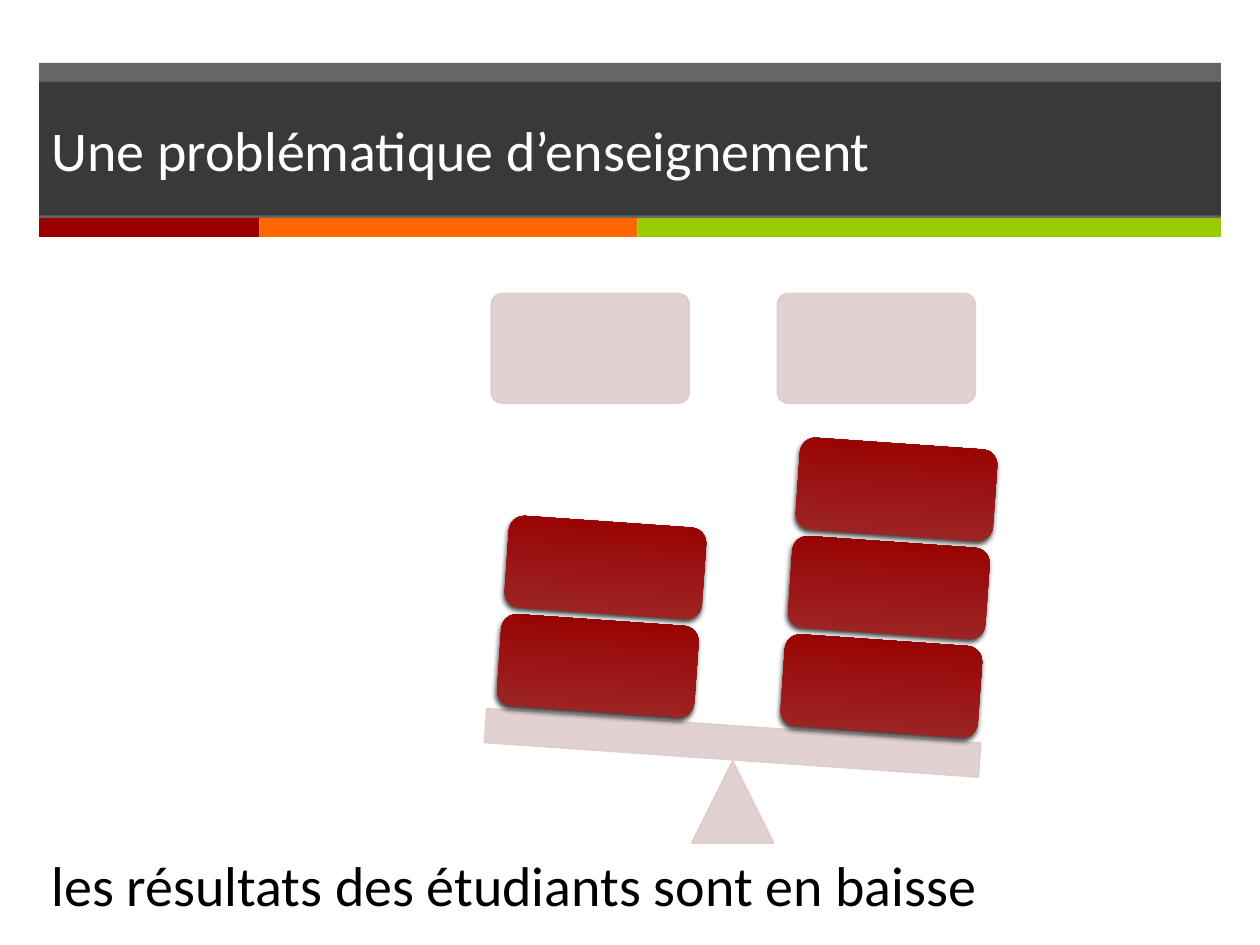
from dataclasses import dataclass

from lxml import etree
from pptx import Presentation
from pptx import util as u
from pptx.dml import color
from pptx.enum import shapes, text
from pptx.oxml import ns

COLUMNS, ROWS = 100, 75
KIND = shapes.MSO_SHAPE


@dataclass(frozen=True)
class Theme:
    """Colours, font and type size of the slide."""
    band: str = "262626"
    stripes: tuple = ("990000", "FF6600", "99CC00")
    pale: str = "DECCCC"
    block: tuple = ("9D2828", "990000")
    light: str = "FFFFFF"
    dark: str = "000000"
    font: str = "Calibri"
    size: int = 32


class Board:
    """Draws elements on one slide, with lengths in grid columns and rows."""

    def __init__(self, deck, theme):
        """Add a blank slide and work out the grid cell."""
        self.theme = theme
        self.slide = deck.slides.add_slide(deck.slide_layouts[6])
        self.cell = deck.slide_width / COLUMNS, deck.slide_height / ROWS

    def place(self, *lengths):
        """Turn columns and rows into slide lengths."""
        return [u.Emu(round(n * self.cell[i % 2])) for i, n in enumerate(lengths)]

    def shape(self, kind, at, fill=None, alpha=None, outline=False, turn=0):
        """Add a preset shape, flat and without a line unless outlined."""
        box = self.slide.shapes.add_shape(kind, *self.place(*at))
        box.shadow.inherit = False
        box.rotation = turn
        box.line.fill.background()
        if fill:
            box.fill.solid()
            box.fill.fore_color.rgb = color.RGBColor.from_string(fill)
        if outline:
            box.line.color.rgb = color.RGBColor.from_string(fill)
            box.line.width = u.Pt(1)
        if alpha:
            for tint in box._element.spPr.iter(ns.qn("a:srgbClr")):
                etree.SubElement(tint, ns.qn("a:alpha"), val=str(alpha * 1000))
        return box

    def pale(self, kind, at, turn=0):
        """Add one pale part of the balance."""
        return self.shape(kind, at, self.theme.pale, 90, True, turn)

    def block(self, at, turn):
        """Add a weight with a gradient and a shadow."""
        box = self.shape(KIND.ROUNDED_RECTANGLE, at, turn=turn)
        box.fill.gradient()
        box.fill.gradient_angle = 90
        for stop, tint, position in zip(box.fill.gradient_stops, self.theme.block, (0, 1)):
            stop.color.rgb = color.RGBColor.from_string(tint)
            stop.position = position
        effects = box._element.spPr.find(ns.qn("a:effectLst"))
        shadow = etree.SubElement(
            effects, ns.qn("a:outerShdw"), blurRad=str(u.Pt(3)), dist=str(u.Pt(2)),
            dir=str(110 * 60000), algn="ctr", rotWithShape="0")
        tint = etree.SubElement(shadow, ns.qn("a:srgbClr"), val=self.theme.dark)
        etree.SubElement(tint, ns.qn("a:alpha"), val="75000")

    def set_text(self, box, words, tint, anchor):
        """Put one left-aligned line of text in a box."""
        frame = box.text_frame
        frame.word_wrap = True
        frame.vertical_anchor = anchor
        para = frame.paragraphs[0]
        para.alignment = text.PP_ALIGN.LEFT
        span = para.add_run()
        span.text = words
        style = {"name": self.theme.font, "size": u.Pt(self.theme.size)}
        for name, value in style.items():
            setattr(span.font, name, value)
        span.font.color.rgb = color.RGBColor.from_string(tint)

    def label(self, at, words):
        """Add a text box with dark text."""
        box = self.slide.shapes.add_textbox(*self.place(*at))
        self.set_text(box, words, self.theme.dark, text.MSO_ANCHOR.TOP)


def main():
    """Build the slide and save it."""
    deck = Presentation()
    deck.slide_width, deck.slide_height = u.Inches(10), u.Inches(7.5)
    theme = Theme()
    board = Board(deck, theme)
    margin, width, tilt = 3.1, 93.8, 4

    board.shape(KIND.RECTANGLE, (margin, 5, width, 12.4), theme.band, 70)
    left = margin
    for tint, span in zip(theme.stripes, (17.5, 30, 46.3)):
        board.shape(KIND.RECTANGLE, (left, 17.3, span, 1.5), tint)
        left += span
    title = board.shape(KIND.RECTANGLE, (margin, 6.5, width, 10.6), theme.band, 70)
    board.set_text(title, "Une problématique d’enseignement", theme.light,
                   text.MSO_ANCHOR.MIDDLE)

    for left in (39, 61.7):
        pan = board.pale(KIND.ROUNDED_RECTANGLE, (left, 23.3, 15.7, 8.7))
        pan.adjustments[0] = 0.1
    board.pale(KIND.ISOSCELES_TRIANGLE, (54.9, 60.4, 6.5, 6.5))
    board.pale(KIND.RECTANGLE, (38.5, 57.6, 39.3, 2.7), tilt)

    for left, top, count in ((62.1, 50.8, 3), (39.6, 49.2, 2)):
        for level in range(count):
            board.block((left + 0.6 * level, top - 7.8 * level, 15.7, 7.3), tilt)

    board.label((margin, 67, 86.4, 6.4), "les résultats des étudiants sont en baisse")
    deck.save("out.pptx")


if __name__ == "__main__":
    main()
